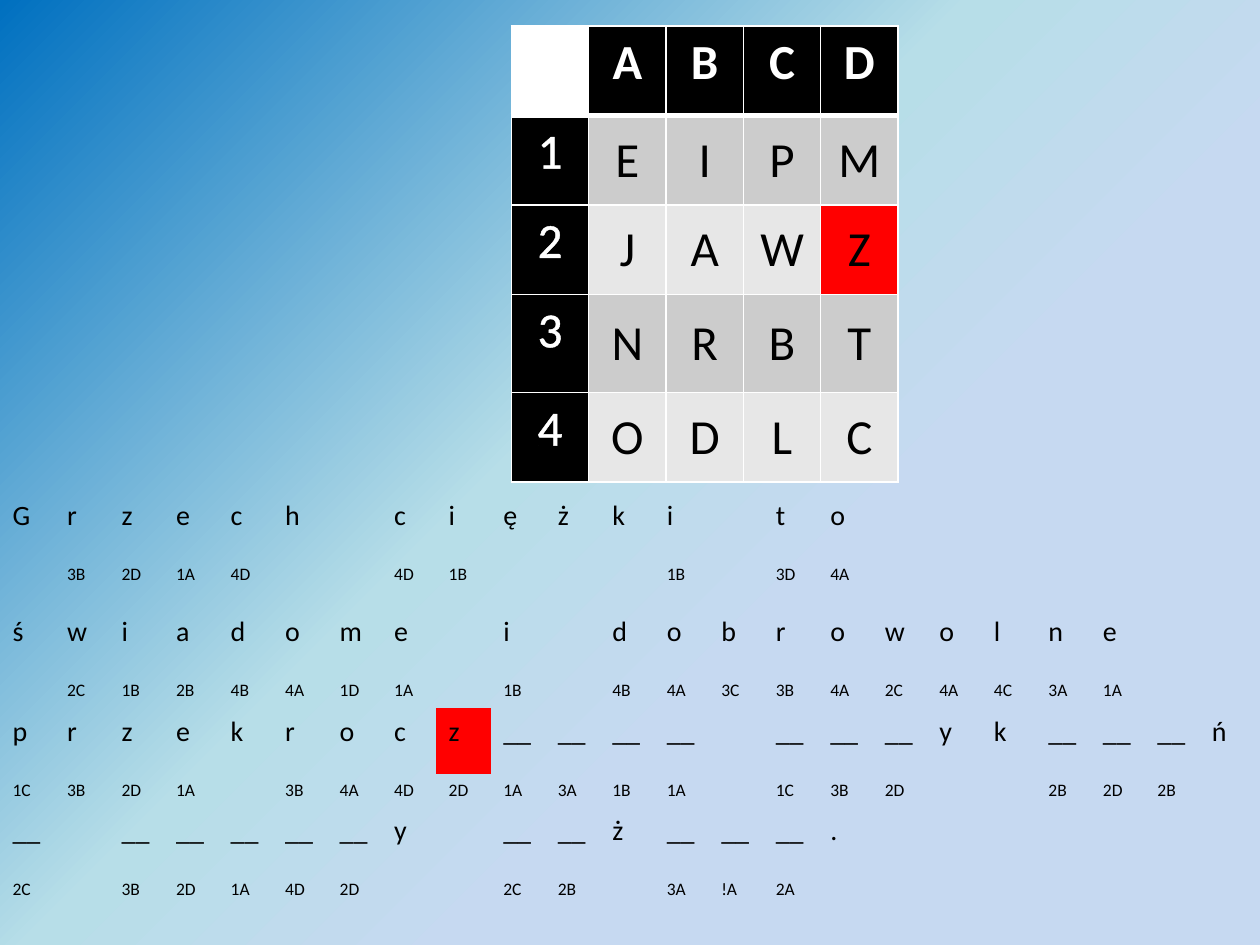
from pptx import Presentation
from pptx.dml.color import RGBColor as Rgb
from pptx.enum.text import MSO_ANCHOR as Anchor, PP_ALIGN as Align
from pptx.oxml import parse_xml as parse
from pptx.oxml.ns import nsdecls, qn
from pptx.util import Pt

PLAIN = "{2D5ABB26-0587-4C30-8999-92F81FD0307C}"
STOPS = [(0, "0070C0"), (44, "B7DEE8"), (64, "C6D9F1"), (100, "C6D9F1")]
GRID = [" ABCD", "1EIPM", "2JAWZ", "3NRBT", "4ODLC"]
LINES = [
    ("Grzech ciężki to",
     ". 3B 2D 1A 4D . . 4D 1B . . . 1B . 3D 4A"),
    ("świadome i dobrowolne",
     ". 2C 1B 2B 4B 4A 1D 1A . 1B . 4B 4A 3C 3B 4A 2C 4A 4C 3A 1A"),
    ("przekrocz____ ___yk___ń",
     "1C 3B 2D 1A . 3B 4A 4D 2D 1A 3A 1B 1A . 1C 3B 2D . . 2B 2D 2B"),
    ("_ _____y __ż___.",
     "2C . 3B 2D 1A 4D 2D . . 2C 2B . 3A !A 2A"),
]


def color(code):
    return Rgb.from_string(code)


def line(tag, width, code):
    return parse(
        f'<a:{tag} {nsdecls("a")} w="{int(Pt(width))}"><a:solidFill>'
        f'<a:srgbClr val="{code}"/></a:solidFill></a:{tag}>')


def paint(cell, code):
    cell.fill.solid()
    cell.fill.fore_color.rgb = color(code)


def put(cell, text, size=16, ink="000000", bold=False, align=Align.LEFT,
        anchor=Anchor.TOP, edge=None):
    cell.vertical_anchor = anchor
    para = cell.text_frame.paragraphs[0]
    para.alignment = align
    if not text:
        para._p.get_or_add_endParaRPr().set("sz", str(size * 100))
        return
    run = para.add_run()
    run.text = text
    font = run.font
    font.name, font.size, font.bold = "Calibri", Pt(size), bold
    font.color.rgb = color(ink)
    if edge:
        font._element.insert(0, line("ln", 0.75, edge))


def frame(cell, low):
    props = cell._tc.get_or_add_tcPr()
    for tag, width in zip(("lnL", "lnR", "lnT", "lnB"), (1, 1, 1, low)):
        props.append(line(tag, width, "FFFFFF"))


def table(slide, left, top, wide, rows, count):
    box = slide.shapes.add_table(
        len(rows), count, Pt(left), Pt(top), Pt(wide * count), Pt(sum(rows)))
    tab = box.table
    tab.first_row = tab.horz_banding = False
    tab._tbl.tblPr.find(qn("a:tableStyleId")).text = PLAIN
    for col in tab.columns:
        col.width = Pt(wide)
    for row, high in zip(tab.rows, rows):
        row.height = Pt(high)
    return tab


def backdrop(slide):
    fill = slide.background.fill
    fill.gradient()
    fill.gradient_angle = 315
    stops = slide._element.find(".//" + qn("a:gsLst"))
    for stop in list(stops):
        stops.remove(stop)
    for pos, code in STOPS:
        stops.append(parse(
            f'<a:gs {nsdecls("a")} pos="{pos * 1000}">'
            f'<a:srgbClr val="{code}"/></a:gs>'))


def phrase(slide):
    count = 23
    rows = [37.4, 29] + [37.4, 19.5] * 3
    tab = table(slide, 0, 281.4, 31.18, rows, count)
    for num, (text, codes) in enumerate(LINES):
        signs = [s.strip().replace("_", "__") for s in text]
        keys = [k.strip(".") for k in codes.split()]
        for row, items, size in ((2 * num, signs, 16), (2 * num + 1, keys, 10)):
            items += [""] * (count - len(items))
            for col, item in enumerate(items):
                put(tab.cell(row, col), item, size=size)
    paint(tab.cell(4, 8), "FF0000")


def cipher(slide):
    tab = table(slide, 292.2, 15, 44.2, [51.1, 51.1, 51.1, 56.2, 51.1], 5)
    for row, text in enumerate(GRID):
        for col, sign in enumerate(text):
            cell = tab.cell(row, col)
            frame(cell, 1 if row else 3)
            look = dict(size=28, align=Align.CENTER)
            if row and col:
                back = "CCCCCC" if row % 2 else "E7E7E7"
                look.update(anchor=Anchor.MIDDLE)
            else:
                back = "000000" if row or col else "FFFFFF"
                look.update(ink="FFFFFF", bold=not row)
                if row:
                    look.update(edge="FFFFFF")
            paint(cell, "FF0000" if sign == "Z" else back)
            put(cell, sign.strip(), **look)


def main():
    deck = Presentation()
    deck.slide_width, deck.slide_height = Pt(720), Pt(540)
    slide = deck.slides.add_slide(deck.slide_layouts[6])
    backdrop(slide)
    phrase(slide)
    cipher(slide)
    deck.save("out.pptx")


if __name__ == "__main__":
    main()
